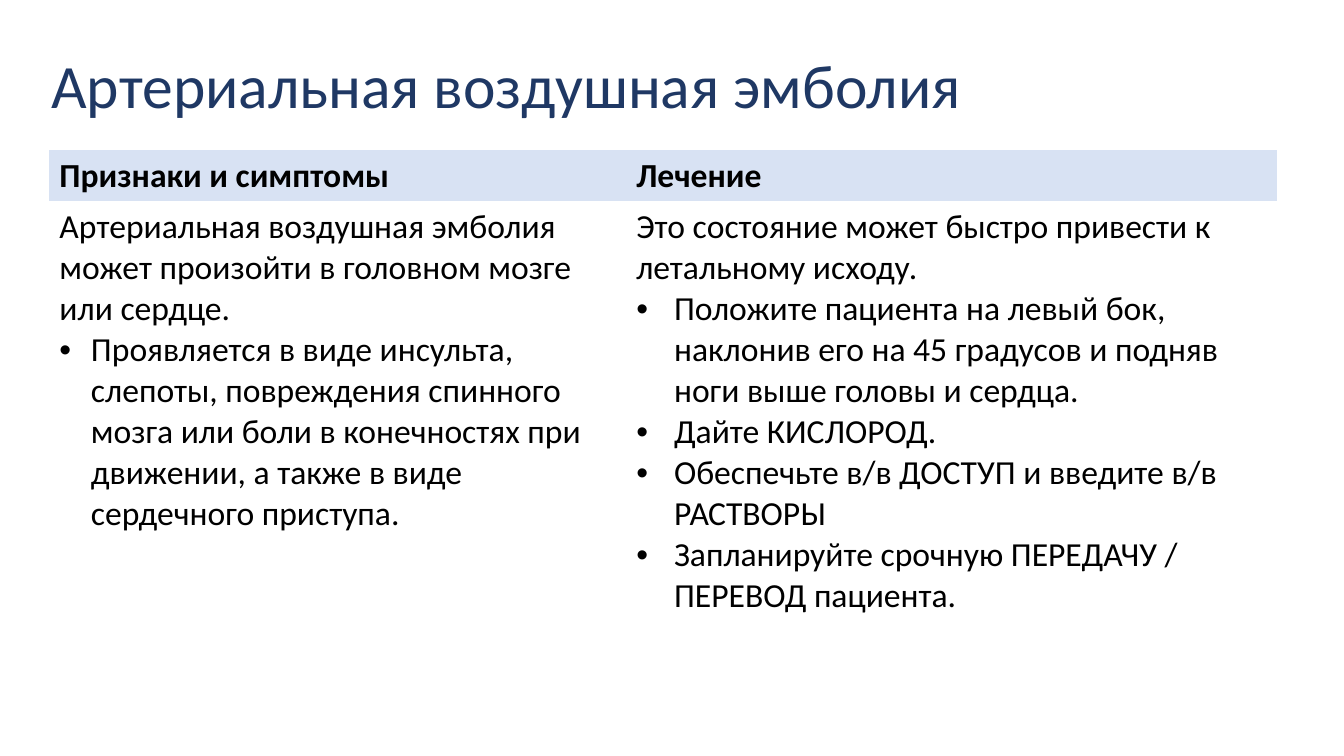
from pptx import Presentation
from pptx.dml.color import RGBColor
from pptx.enum import text
from pptx.oxml import ns, xmlchemy
from pptx.util import Pt

PLAIN = "{2D5ABB26-0587-4C30-8999-92F81FD0307C}"  # table style without borders


def style(font, size, color, bold=False):
    look = {"name": "Calibri", "size": Pt(size), "bold": bold}
    for key, value in look.items():
        setattr(font, key, value)
    font.color.rgb = RGBColor.from_string(color)


def bullet(para, indent):
    """Give the paragraph a black bullet with a hanging indent in points."""
    props = para._p.get_or_add_pPr()
    props.set("marL", str(Pt(indent)))
    props.set("indent", str(-Pt(indent)))
    color = xmlchemy.OxmlElement("a:buClr")
    black = xmlchemy.OxmlElement("a:srgbClr")
    black.set("val", "000000")
    color.append(black)
    face = xmlchemy.OxmlElement("a:buFont")
    face.set("typeface", "Arial")
    mark = xmlchemy.OxmlElement("a:buChar")
    mark.set("char", "•")
    for part in (color, face, mark):
        props.append(part)


deck = Presentation()
deck.slide_width, deck.slide_height = Pt(960), Pt(540)
slide = deck.slides.add_slide(deck.slide_layouts[6])

# Title
box = slide.shapes.add_textbox(Pt(29.5), Pt(10.8), Pt(828), Pt(104.4))
frame = box.text_frame
frame.word_wrap = True
frame.vertical_anchor = text.MSO_ANCHOR.MIDDLE
title = frame.paragraphs[0]
title.text = "Артериальная воздушная эмболия"
title.line_spacing = 0.9
style(title.font, 44, "1F3864")

# Table: heading, column width, bullet indent, lead sentence, bullets
columns = [
    ("Признаки и симптомы", 412, 22.5,
     "Артериальная воздушная эмболия может произойти в головном мозге или сердце.",
     ["Проявляется в виде инсульта, слепоты, повреждения спинного мозга "
      "или боли в конечностях при движении, а также в виде сердечного приступа."]),
    ("Лечение", 465, 27,
     "Это состояние может быстро привести к летальному исходу.",
     ["Положите пациента на левый бок, наклонив его на 45 градусов "
      "и подняв ноги выше головы и сердца.",
      "Дайте КИСЛОРОД.",
      "Обеспечьте в/в ДОСТУП и введите в/в РАСТВОРЫ",
      "Запланируйте срочную ПЕРЕДАЧУ / ПЕРЕВОД пациента."]),
]
grid = slide.shapes.add_table(2, 2, Pt(35.3), Pt(107.3), Pt(877), Pt(360))
for node in grid.element.iter(ns.qn("a:tableStyleId")):
    node.text = PLAIN
table = grid.table
table.rows[0].height, table.rows[1].height = Pt(36.5), Pt(323.5)

for col, (name, width, indent, lead, points) in enumerate(columns):
    table.columns[col].width = Pt(width)
    head, body = table.cell(0, col), table.cell(1, col)
    head.fill.solid()
    head.fill.fore_color.rgb = RGBColor.from_string("D8E2F3")
    body.fill.background()
    head.text = name
    style(head.text_frame.paragraphs[0].font, 24, "000000", True)
    body.text = "\n".join([lead, *points])
    for index, para in enumerate(body.text_frame.paragraphs):
        if index:
            bullet(para, indent)
        style(para.font, 24, "000000")

deck.save("out.pptx")
